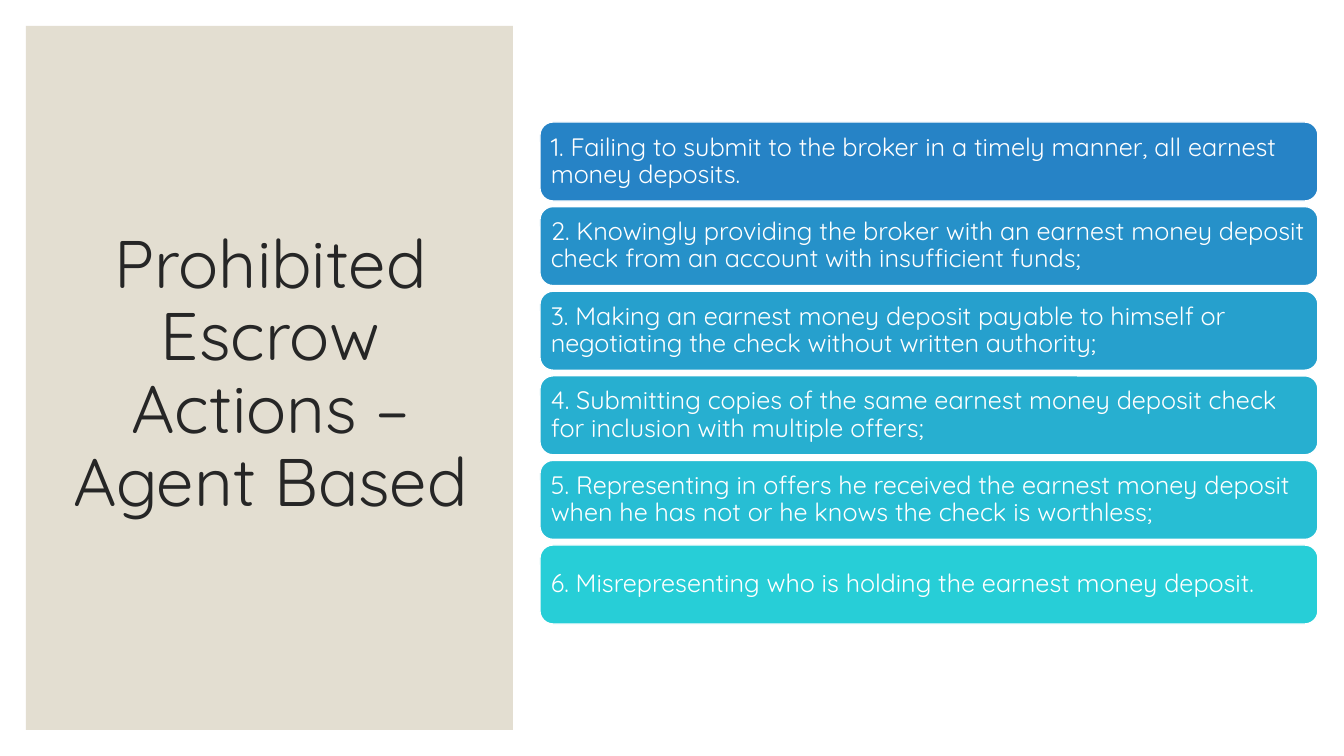
from dataclasses import dataclass

from pptx import Presentation
from pptx.dml.color import RGBColor
from pptx.enum.shapes import MSO_SHAPE
from pptx.enum.text import MSO_ANCHOR, PP_ALIGN
from pptx.util import Emu, Pt

EMU_PER_PX = 914400 / 100.8
SLIDE_WIDTH, SLIDE_HEIGHT = 1344, 756

TITLE = "Prohibited Escrow Actions – Agent Based"
ACTIONS = [
    "1. Failing to submit to the broker in a timely manner, all earnest money deposits.",
    "2. Knowingly providing the broker with an earnest money deposit check from an "
    "account with insufficient funds;",
    "3. Making an earnest money deposit payable to himself or negotiating the check "
    "without written authority;",
    "4. Submitting copies of the same earnest money deposit check for inclusion with "
    "multiple offers;",
    "5. Representing in offers he received the earnest money deposit when he has not "
    "or he knows the check is worthless;",
    "6. Misrepresenting who is holding the earnest money deposit.",
]

BAR_LEFT, BAR_WIDTH, BAR_HEIGHT = 540, 778, 79
FIRST_BAR_TOP, LAST_BAR_TOP = 122, 545
BAR_INSET = 7


@dataclass(frozen=True)
class Theme:
    font: str = "Quicksand"
    title_size: int = 48
    action_size: int = 18
    white: str = "FFFFFF"
    panel: str = "E3DED1"
    title_text: str = "262626"
    bars: tuple = ("2683C6", "2691C9", "26A0CD", "27AFD0", "27BED4", "27CED7")


THEME = Theme()


def px(value):
    return Emu(round(value * EMU_PER_PX))


def set_values(target, values):
    for name, value in values.items():
        setattr(target, name, value)


def add_block(slide, preset, box, fill, line=None):
    """Add a filled preset shape, outlined only when a line colour is given."""
    shape = slide.shapes.add_shape(preset, *map(px, box))
    shape.shadow.inherit = False
    shape.fill.solid()
    shape.fill.fore_color.rgb = RGBColor.from_string(fill)
    if line:
        shape.line.color.rgb = RGBColor.from_string(line)
        shape.line.width = Pt(1)
    else:
        shape.line.fill.background()
    return shape


def write_text(shape, text, size, color, alignment, inset):
    frame = shape.text_frame
    margins = ("margin_left", "margin_top", "margin_right", "margin_bottom")
    set_values(frame, {
        "word_wrap": True,
        "vertical_anchor": MSO_ANCHOR.MIDDLE,
        **dict.fromkeys(margins, px(inset)),
    })
    paragraph = frame.paragraphs[0]
    set_values(paragraph, {"alignment": alignment, "line_spacing": 0.9})
    run = paragraph.add_run()
    run.text = text
    set_values(run.font, {"name": THEME.font, "size": Pt(size)})
    run.font.color.rgb = RGBColor.from_string(color)


def add_title_panel(slide):
    add_block(slide, MSO_SHAPE.RECTANGLE, (26, 26, 487, 704), THEME.panel)
    title = slide.shapes.add_textbox(*map(px, (63, 61, 415, 629)))
    write_text(title, TITLE, THEME.title_size, THEME.title_text, PP_ALIGN.CENTER, 10)


def add_action_bars(slide):
    pitch = (LAST_BAR_TOP - FIRST_BAR_TOP) / (len(ACTIONS) - 1)
    for index, (action, color) in enumerate(zip(ACTIONS, THEME.bars)):
        top = FIRST_BAR_TOP + index * pitch
        box = (BAR_LEFT, top, BAR_WIDTH, BAR_HEIGHT)
        bar = add_block(slide, MSO_SHAPE.ROUNDED_RECTANGLE, box, color, THEME.white)
        write_text(bar, action, THEME.action_size, THEME.white, PP_ALIGN.LEFT, BAR_INSET)


def main():
    presentation = Presentation()
    set_values(presentation, {
        "slide_width": px(SLIDE_WIDTH),
        "slide_height": px(SLIDE_HEIGHT),
    })
    slide = presentation.slides.add_slide(presentation.slide_layouts[6])
    add_title_panel(slide)
    add_action_bars(slide)
    presentation.save("out.pptx")


if __name__ == "__main__":
    main()
